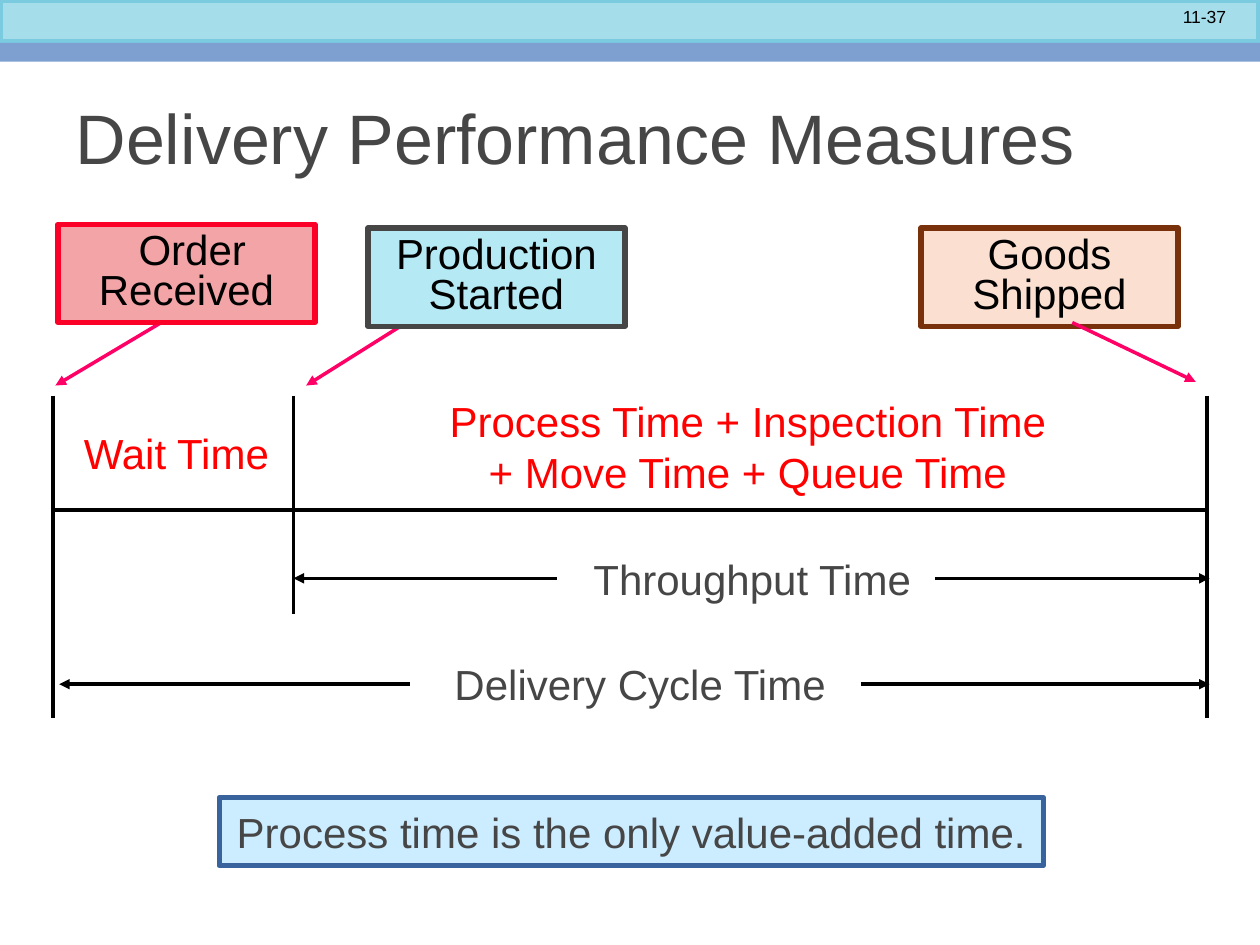
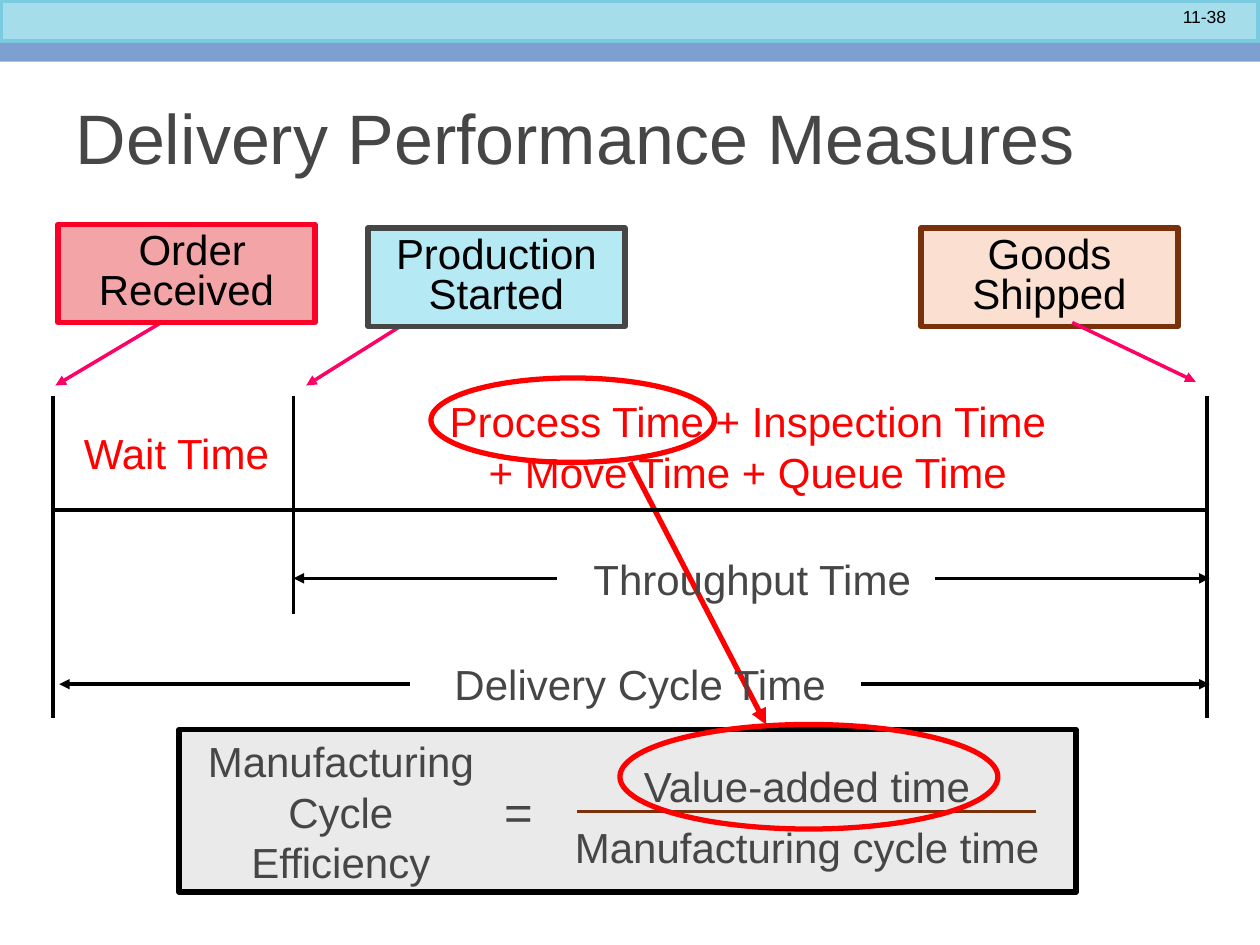
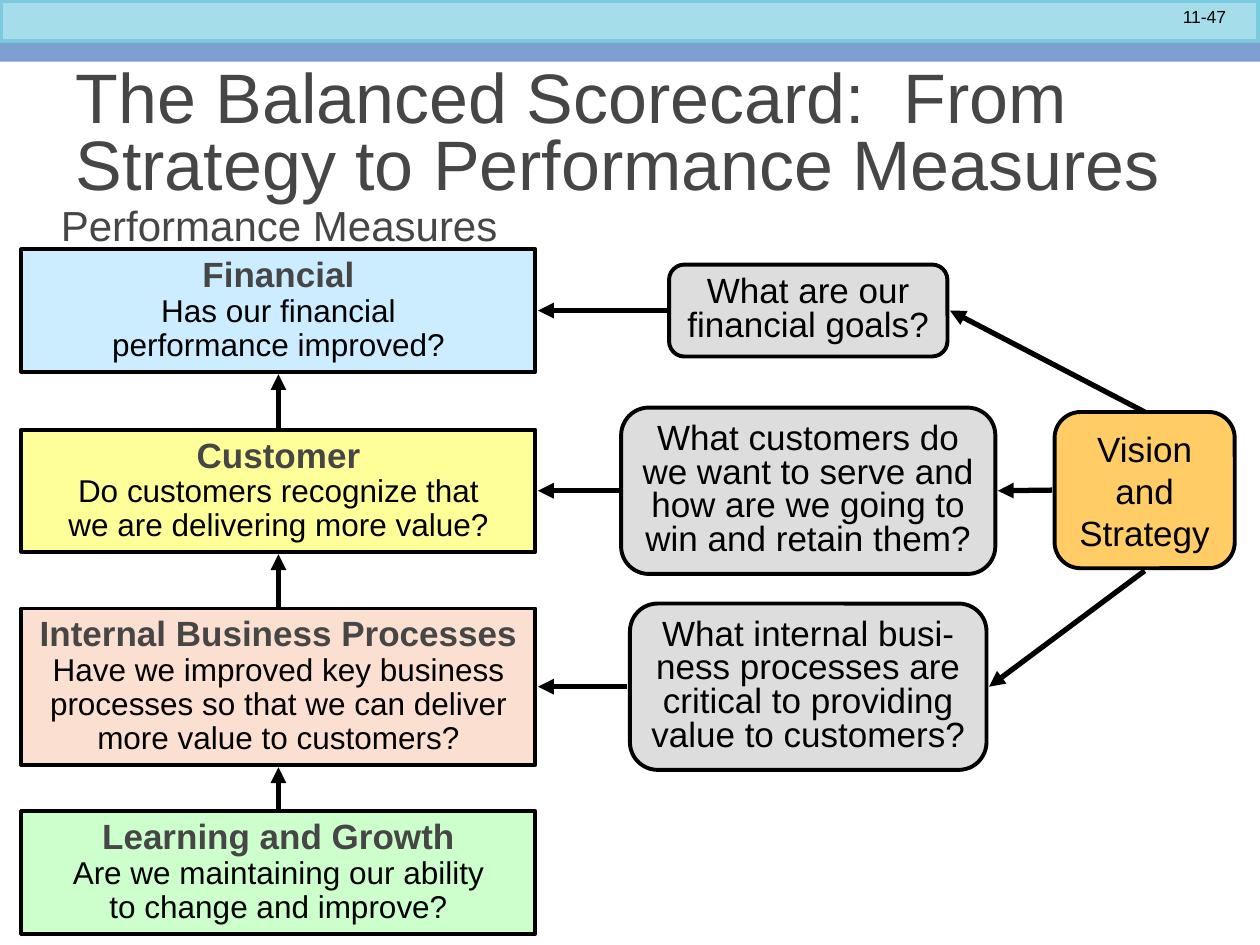
from lxml.etree import SubElement
from pptx import Presentation
from pptx.dml.color import RGBColor
from pptx.enum.shapes import MSO_CONNECTOR as Link, MSO_SHAPE as Kind
from pptx.enum.text import MSO_ANCHOR as Anchor, MSO_AUTO_SIZE as Fit, PP_ALIGN as Align
from pptx.oxml.ns import qn
from pptx.util import Inches, Pt

FONT = "Arial"
HUE = {
    "black": "000000", "text": "464646", "red": "FF0000", "pink": "FF0066",
    "band": "A6DDEA", "edge": "7ACBE0", "stripe": "7DA0D0",
    "rose": "F2A4A7", "crimson": "FC0128", "aqua": "B5E9F4",
    "peach": "FBE0D1", "brown": "78310B", "sky": "CCECFF", "blue": "39639D",
    "mist": "EAEAEA", "grey": "DDDDDD", "yellow": "FFFF99",
    "green": "CCFFCC", "gold": "FFCC66",
}


def rgb(name):
    return RGBColor.from_string(HUE[name])


def write(frame, *paras, size=24, color="text", bold=False, align=Align.CENTER,
          space=None, wrap=True):
    """Fill a text frame; a paragraph is a string or (string, own format)."""
    frame.auto_size = Fit.NONE
    frame.word_wrap = wrap
    frame.vertical_anchor = Anchor.MIDDLE
    for i, item in enumerate(paras):
        words, own = (item, {}) if isinstance(item, str) else item
        para = frame.paragraphs[0] if i == 0 else frame.add_paragraph()
        para.text = words
        para.alignment = align
        para.line_spacing = space
        for run in para.runs:
            run.font.name = FONT
            run.font.size = Pt(own.get("size", size))
            run.font.bold = own.get("bold", bold)
            run.font.color.rgb = rgb(own.get("color", color))


def label(slide, box, *paras, **form):
    area = slide.shapes.add_textbox(*map(Inches, box))
    write(area.text_frame, *paras, **form)


def block(slide, box, *paras, kind=Kind.RECTANGLE, fill=None, edge=None,
          width=3, **form):
    shape = slide.shapes.add_shape(kind, *map(Inches, box))
    shape.shadow.inherit = False
    if fill:
        shape.fill.solid()
        shape.fill.fore_color.rgb = rgb(fill)
    else:
        shape.fill.background()
    if edge:
        shape.line.color.rgb = rgb(edge)
        shape.line.width = Pt(width)
    else:
        shape.line.fill.background()
    if paras:
        write(shape.text_frame, *paras, **form)
    return shape


def rule(slide, start, end, color="black", width=2, arrow=False):
    line = slide.shapes.add_connector(Link.STRAIGHT, *map(Inches, (*start, *end)))
    line.line.color.rgb = rgb(color)
    line.line.width = Pt(width)
    props = line.element.spPr
    if arrow:
        SubElement(props.find(qn("a:ln")), qn("a:tailEnd"), type="triangle")
    SubElement(props, qn("a:effectLst"))


def style(slide, layout):
    """Move the bands, drawn on a slide, to its layout and place the title."""
    bands = [
        block(slide, (0, 0, 10, 0.34), fill="band", edge="edge", width=4),
        block(slide, (0, 0.34, 10, 0.15), fill="stripe"),
    ]
    for i, band in enumerate(bands):
        layout.shapes.element.insert(2 + i, band.element)
    title = layout.placeholders[0]
    title.left, title.top, title.width, title.height = map(Inches, (0.5, 0.5, 9, 1.17))


def start(deck, title, page, space=None):
    slide = deck.slides.add_slide(deck.slide_layouts[5])
    write(slide.shapes.title.text_frame, title, size=40, align=Align.LEFT, space=space)
    label(slide, (8.5, 0, 1.33, 0.27), page, size=10, color="black", align=Align.RIGHT)
    return slide


def timeline(slide, x, y):
    left, mid, right = x, x + 1.91, x + 9.16
    axis = y + 2.27

    label(slide, (x + 0.13, y + 1.56, 1.7, 0.5), "Wait Time", color="red", wrap=False)
    label(slide, (x + 3.03, y + 1.31, 4.97, 0.9),
          "Process Time + Inspection Time\n+ Move Time + Queue Time",
          color="red", wrap=False)

    for post, low in ((left, 3.92), (mid, 3.09), (right, 3.92)):
        rule(slide, (post, y + 1.36), (post, y + low))
    rule(slide, (left, axis), (right, axis), width=2.25)

    events = (
        (" Order Received", 0.04, 0, "rose", "crimson", (0.91, 0.75), (0.02, 1.28)),
        ("Production\nStarted", 2.5, 0.03, "aqua", "text", (2.98, 0.67), (2.01, 1.28)),
        ("Goods Shipped", 6.89, 0.03, "peach", "brown", (8.09, 0.78), (9.07, 1.25)),
    )
    for name, dx, dy, fill, edge, tail, tip in events:
        ends = [(x + a, y + b) for a, b in (tail, tip)]
        over = name == "Goods Shipped"
        if not over:
            rule(slide, *ends, color="pink", arrow=True)
        block(slide, (x + dx, y + dy, 2.04, 0.78), name, fill=fill, edge=edge,
              color="black", space=0.8)
        if over:
            rule(slide, *ends, color="pink", arrow=True)

    spans = (
        ("Throughput Time", 4.18, 2.74, 2.81, mid, (4, 7)),
        ("Delivery Cycle Time", 3.08, 3.16, 3.65, left + 0.05, (2.83, 6.41)),
    )
    for name, dx, wide, dy, first, (near, far) in spans:
        level = y + dy
        label(slide, (x + dx, level - 0.25, wide, 0.5), name, wrap=False)
        rule(slide, (x + near, level), (first, level), arrow=True)
        rule(slide, (x + far, level), (right + 0.02, level), arrow=True)


def formula(slide, x, y):
    block(slide, (x, y, 7.12, 1.29), fill="mist", edge="black")
    label(slide, (x + 0.13, y, 2.31, 1.3), "Manufacturing", "Cycle", "Efficiency",
          wrap=False)
    label(slide, (x + 2.48, y + 0.37, 0.43, 0.56), "=", size=28)
    label(slide, (x + 3.04, y + 0.12, 3.89, 1.06),
          "Value-added time\nManufacturing cycle time", space=1.2, wrap=False)
    rule(slide, (x + 3.16, y + 0.65), (x + 6.8, y + 0.65), color="brown")


def rings(slide, x, y):
    """Circle process time and value-added time, joined by an arrow."""
    rule(slide, (x + 1.58, y + 0.67), (x + 2.66, y + 2.75), color="red", width=3,
         arrow=True)
    for box in ((x, y, 2.25, 0.67), (x + 1.5, y + 2.75, 3, 0.83)):
        block(slide, box, kind=Kind.OVAL, edge="red")


def scorecard(slide, x, y):
    wide, center = 4.08, x + 6.245
    gap = 0.02
    look = dict(edge="black", width=2.25, size=20, color="black")
    rows = (
        ("Financial", "Has our financial\nperformance improved?", 0.45, 0.97, "sky",
         "What are our\nfinancial goals?", 2.21, 0.73),
        ("Customer", "Do customers recognize that\nwe are delivering more value?",
         1.88, 0.97, "yellow",
         "What customers do\nwe want to serve and\nhow are we going to\n"
         "win and retain them?", 2.97, 1.32),
        ("Internal Business Processes",
         "Have we improved key business processes so that we can deliver "
         "more value to customers?", 3.3, 1.24, "peach",
         "What internal busi-\nness processes are\ncritical to providing\n"
         "value to customers?", 2.83, 1.32),
        ("Learning and Growth", "Are we maintaining our ability\n"
         "to change and improve?", 4.91, 0.97, "green", None, 0, 0),
    )
    vx, vy, vw, vh = vision = (x + 8.2, y + 1.74, 1.43, 1.24)
    exits = ((vx + vw / 2, vy), (vx - gap, vy + vh / 2), (vx + vw / 2, vy + vh + gap))

    label(slide, (x + 0.21, y, 3.67, 0.5), "Performance Measures", wrap=False)
    block(slide, vision, "Vision and Strategy", kind=Kind.ROUNDED_RECTANGLE,
          fill="gold", **look)
    base = None
    for i, (name, ask, dy, tall, fill, goal, gw, gh) in enumerate(rows):
        top = y + dy
        level = top + tall / 2
        block(slide, (x, top, wide, tall), (name, dict(bold=True, color="text")),
              (ask, dict(size=18)), fill=fill, space=0.9, **look)
        if base:
            rule(slide, (x + wide / 2, top), (x + wide / 2, base + gap), width=3,
                 arrow=True)
        base = top + tall
        if goal:
            block(slide, (center - gw / 2, level - gh / 2, gw, gh), goal,
                  kind=Kind.ROUNDED_RECTANGLE, fill="grey", space=0.8, wrap=False,
                  **look)
            rule(slide, (center - gw / 2 - gap, level), (x + wide + gap, level),
                 width=3, arrow=True)
            rule(slide, exits[i], (center + gw / 2 + gap, level), width=3, arrow=True)


def main():
    deck = Presentation()
    deck.slide_width, deck.slide_height = Inches(10), Inches(7.5)

    note = start(deck, "Delivery Performance Measures", "11-37")
    style(note, note.slide_layout)
    block(note, (1.74, 6.33, 6.54, 0.54), "Process time is the only value-added time.",
          fill="sky", edge="blue")
    timeline(note, 0.42, 1.78)

    ratio = start(deck, "Delivery Performance Measures", "11-38")
    formula(ratio, 1.42, 5.79)
    rings(ratio, 3.42, 3)
    timeline(ratio, 0.42, 1.78)

    card = start(deck, "The Balanced Scorecard:  From\nStrategy to Performance Measures",
                 "11-47", space=0.8)
    scorecard(card, 0.17, 1.53)

    deck.save("out.pptx")


if __name__ == "__main__":
    main()
